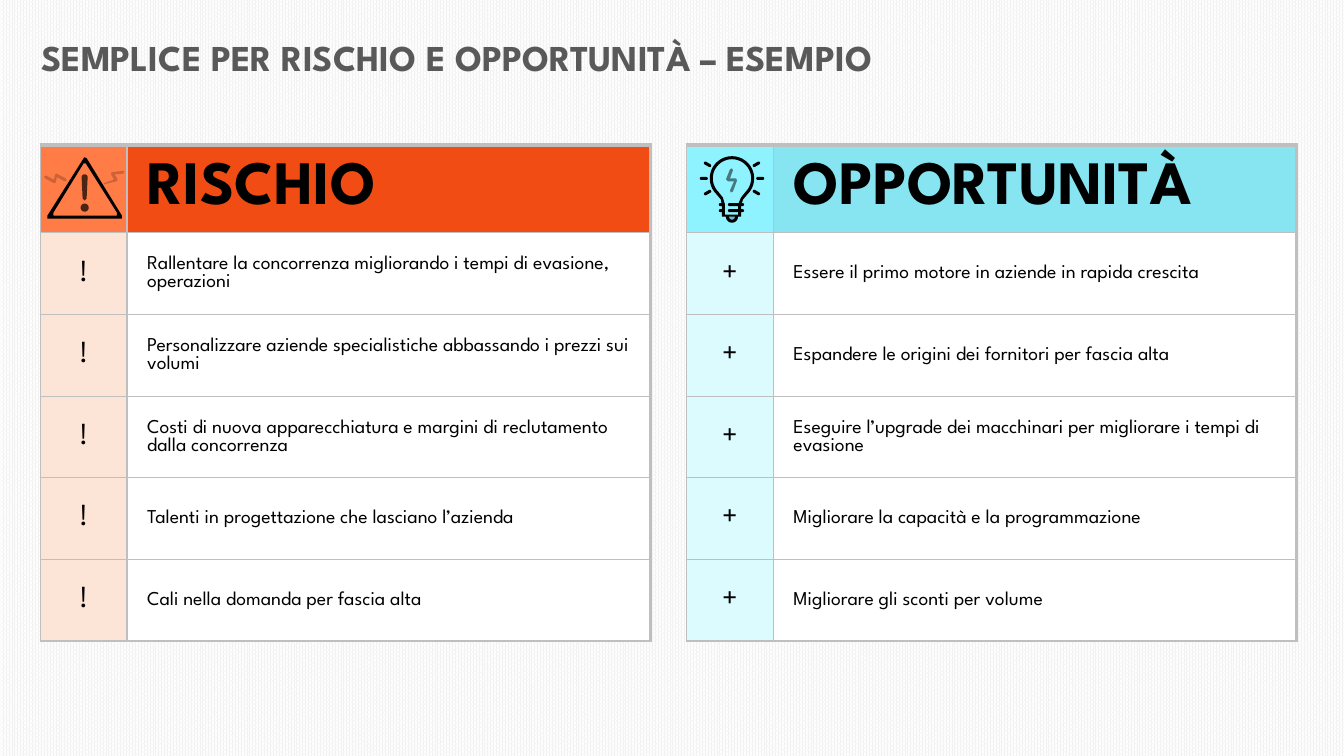
import math

from lxml import etree
from pptx import Presentation
from pptx.dml.color import RGBColor
from pptx.enum import dml, shapes, text
from pptx.oxml import ns
from pptx.util import Inches, Pt

FONT = "League Spartan"
BLACK = RGBColor(0x00, 0x00, 0x00)
WHITE = RGBColor(0xFF, 0xFF, 0xFF)
PALE_GREY = RGBColor(0xF2, 0xF2, 0xF2)
BORDER_GREY = RGBColor(0xBF, 0xBF, 0xBF)
TITLE_GREY = RGBColor(0x59, 0x59, 0x59)
ORANGE = RGBColor(0xF0, 0x4C, 0x13)
LIGHT_ORANGE = RGBColor(0xFF, 0x7C, 0x46)
PALE_ORANGE = RGBColor(0xFC, 0xE4, 0xD6)
CYAN = RGBColor(0x86, 0xE5, 0xF1)
LIGHT_CYAN = RGBColor(0x8E, 0xF3, 0xFF)
PALE_CYAN = RGBColor(0xDC, 0xFB, 0xFF)

RISKS = [
    "Rallentare la concorrenza migliorando i tempi di evasione, operazioni",
    "Personalizzare aziende specialistiche abbassando i prezzi sui volumi",
    "Costi di nuova apparecchiatura e margini di reclutamento dalla concorrenza",
    "Talenti in progettazione che lasciano l’azienda",
    "Cali nella domanda per fascia alta",
]
OPPORTUNITIES = [
    "Essere il primo motore in aziende in rapida crescita",
    "Espandere le origini dei fornitori per fascia alta",
    "Eseguire l’upgrade dei macchinari per migliorare i tempi di evasione",
    "Migliorare la capacità e la programmazione",
    "Migliorare gli sconti per volume",
]


def set_background(slide):
    fill = slide.background.fill
    fill.patterned()
    fill.pattern = dml.MSO_PATTERN.PERCENT_80
    fill.fore_color.rgb = PALE_GREY
    fill.back_color.rgb = WHITE


def style_paragraph(p, size, color, bold=False, align=text.PP_ALIGN.LEFT):
    p.alignment = align
    p.font.name = FONT
    p.font.size = Pt(size)
    p.font.bold = bold
    p.font.color.rgb = color


def add_title(slide, wording):
    title = slide.shapes.title
    title.left, title.top = Inches(0.31), Inches(0.3)
    title.width, title.height = Inches(12.55), Inches(0.54)
    tf = title.text_frame
    tf.text = wording
    tf.word_wrap = True
    tf.auto_size = text.MSO_AUTO_SIZE.NONE
    tf.vertical_anchor = text.MSO_ANCHOR.TOP
    style_paragraph(tf.paragraphs[0], 26, TITLE_GREY, bold=True)


def set_borders(cell, top, right):
    """Draw all four cell borders; left and bottom are 1 pt wide."""
    tc_pr = cell._tc.get_or_add_tcPr()
    for tag, width in (("lnL", 1), ("lnR", right), ("lnT", top), ("lnB", 1)):
        ln = etree.SubElement(tc_pr, ns.qn("a:" + tag), w=str(Pt(width)))
        fill = etree.SubElement(ln, ns.qn("a:solidFill"))
        etree.SubElement(fill, ns.qn("a:srgbClr"), val=str(BORDER_GREY))


def fill_cell(cell, wording, color, size, bold=False, centred=False):
    cell.margin_left = Inches(0.01 if centred else 0.2)
    cell.margin_top = cell.margin_right = Inches(0.01)
    cell.margin_bottom = 0
    cell.vertical_anchor = text.MSO_ANCHOR.MIDDLE
    cell.fill.solid()
    cell.fill.fore_color.rgb = color
    cell.text = wording
    align = text.PP_ALIGN.CENTER if centred else text.PP_ALIGN.LEFT
    style_paragraph(cell.text_frame.paragraphs[0], size, BLACK, bold, align)


def add_list_table(slide, left, heading, mark, items, colors):
    """Add a headed table with a narrow column of marks beside the items."""
    icon_color, heading_color, mark_color = colors
    table = slide.shapes.add_table(
        len(items) + 1, 2, Inches(left), Inches(1.44), Inches(6.05), Inches(4.94)
    ).table
    table.first_row = table.horz_banding = False
    table.columns[0].width, table.columns[1].width = Inches(0.86), Inches(5.19)
    for i, row in enumerate(table.rows):
        row.height = Inches(0.81 if i else 0.87)
        for j, cell in enumerate(row.cells):
            set_borders(cell, top=1 if i else 3, right=2.25 if j else 1)
    fill_cell(table.cell(0, 0), "", icon_color, 21, centred=True)
    fill_cell(table.cell(0, 1), heading, heading_color, 44, bold=True)
    for i, item in enumerate(items, 1):
        fill_cell(table.cell(i, 0), mark, mark_color, 21, centred=True)
        fill_cell(table.cell(i, 1), item, WHITE, 14)


def paint(sp, opacity=100, rotation=0):
    """Fill a shape with black at the given opacity, without outline."""
    sp.shadow.inherit = False
    sp.fill.solid()
    sp.fill.fore_color.rgb = BLACK
    sp.line.fill.background()
    sp.rotation = rotation
    if opacity < 100:
        clr = sp._element.spPr.find(ns.qn("a:solidFill"))[0]
        etree.SubElement(clr, ns.qn("a:alpha"), val=str(opacity * 1000))


def add_outline(icon, contours, opacity=100, rotation=0):
    """Add one filled freeform; a second contour cuts a hole in the first."""
    contours = [[(Inches(x), Inches(y)) for x, y in c] for c in contours]
    builder = icon.shapes.build_freeform(*contours[0][0])
    builder.add_line_segments(contours[0][1:])
    for contour in contours[1:]:
        builder.move_to(*contour[0])
        builder.add_line_segments(contour[1:])
    paint(builder.convert_to_shape(), opacity, rotation)


def add_bar(icon, cx, cy, width, rotation=0):
    height = 0.03
    sp = icon.shapes.add_shape(
        shapes.MSO_SHAPE.ROUNDED_RECTANGLE, Inches(cx - width / 2),
        Inches(cy - height / 2), Inches(width), Inches(height))
    sp.adjustments[0] = 0.5
    paint(sp, rotation=rotation)


def arc(cx, cy, radius, start, end, step=5):
    """Points on a circle, with angles in degrees running clockwise."""
    angles = [math.radians(a) for a in range(start, end + step, step)]
    return [(cx + radius * math.cos(a), cy + radius * math.sin(a)) for a in angles]


def bolt(left, top):
    points = [(0.06, 0), (0.07, 0.02), (0.04, 0.1), (0.1, 0.1), (0.11, 0.12),
              (0.07, 0.23), (0.05, 0.24), (0.04, 0.22), (0.08, 0.13),
              (0.02, 0.13), (0, 0.11), (0.04, 0.01)]
    return [(left + x, top + y) for x, y in points]


def mirrored_bolt(left, top):
    points = [(0.01, 0.23), (0, 0.22), (0.01, 0.21), (0.07, 0.14), (0.02, 0.11),
              (0.01, 0.09), (0.1, 0.02), (0.12, 0.02), (0.12, 0.04),
              (0.05, 0.09), (0.1, 0.12), (0.1, 0.14)]
    return [(left + x, top + y) for x, y in points]


def add_warning_icon(slide):
    icon = slide.shapes.add_group_shape()
    left_bolt = [(0.62, 1.86), (0.6, 1.85), (0.57, 1.77), (0.53, 1.8),
                 (0.51, 1.8), (0.47, 1.7), (0.48, 1.68), (0.5, 1.69),
                 (0.53, 1.77), (0.57, 1.74), (0.59, 1.74), (0.63, 1.84)]
    add_outline(icon, [left_bolt], 20, 319.5)
    add_outline(icon, [mirrored_bolt(1.07, 1.64)], 20, 30.7)
    rim = [(0.83, 1.57), (0.84, 1.56), (0.86, 1.57), (1.21, 2.14), (1.21, 2.17),
           (0.47, 2.17), (0.47, 2.14)]
    hole = [(0.83, 1.62), (0.85, 1.62), (1.16, 2.11), (1.16, 2.14),
            (0.53, 2.14), (0.53, 2.11)]
    add_outline(icon, [rim, hole])
    stroke = arc(0.84, 1.76, 0.03, 180, 360) + [(0.86, 1.97), (0.84, 1.99), (0.82, 1.97)]
    add_outline(icon, [stroke], 70)
    add_outline(icon, [arc(0.84, 2.06, 0.04, 0, 355)], 70)


def add_bulb_icon(slide):
    icon = slide.shapes.add_group_shape()
    cx, cy, base_y = 7.26, 1.77, 2.15
    add_outline(icon, [arc(cx, base_y, 0.05, 0, 180)], 24)
    glass = arc(cx, cy, 0.22, 135, 405) + [(7.37, 1.98), (7.35, 2.04), (7.35, base_y)]
    rim = glass + arc(cx, base_y, 0.06, 0, 180) + [(7.16, base_y), (7.16, 2.04), (7.15, 1.98)]
    hole = arc(cx, cy, 0.19, 135, 405) + [
        (7.35, 1.96), (7.32, 2.03), (7.32, 2.13), (7.19, 2.13), (7.19, 2.03), (7.17, 1.96)]
    add_outline(icon, [rim, hole, arc(cx, base_y, 0.03, 0, 180)])
    for y in (2.03, 2.09):
        add_bar(icon, 7.16, y, 0.06)
        add_bar(icon, 7.3, y, 0.16)
    for angle in (-30, 0, 30, 150, 180, 210):
        (x, y), = arc(cx, cy, 0.28, angle, angle)[:1]
        add_bar(icon, x, y, 0.08, angle)
    add_outline(icon, [bolt(7.2, 1.67)], 50)


def main():
    prs = Presentation()
    prs.slide_width, prs.slide_height = Inches(13.33), Inches(7.5)
    slide = prs.slides.add_slide(prs.slide_layouts[5])
    set_background(slide)
    add_title(slide, "SEMPLICE PER RISCHIO E OPPORTUNITÀ – ESEMPIO")
    add_list_table(slide, 0.4, "RISCHIO", "!", RISKS,
                   (LIGHT_ORANGE, ORANGE, PALE_ORANGE))
    add_list_table(slide, 6.81, "OPPORTUNITÀ", "+", OPPORTUNITIES,
                   (LIGHT_CYAN, CYAN, PALE_CYAN))
    add_warning_icon(slide)
    add_bulb_icon(slide)
    prs.save("out.pptx")


if __name__ == "__main__":
    main()
